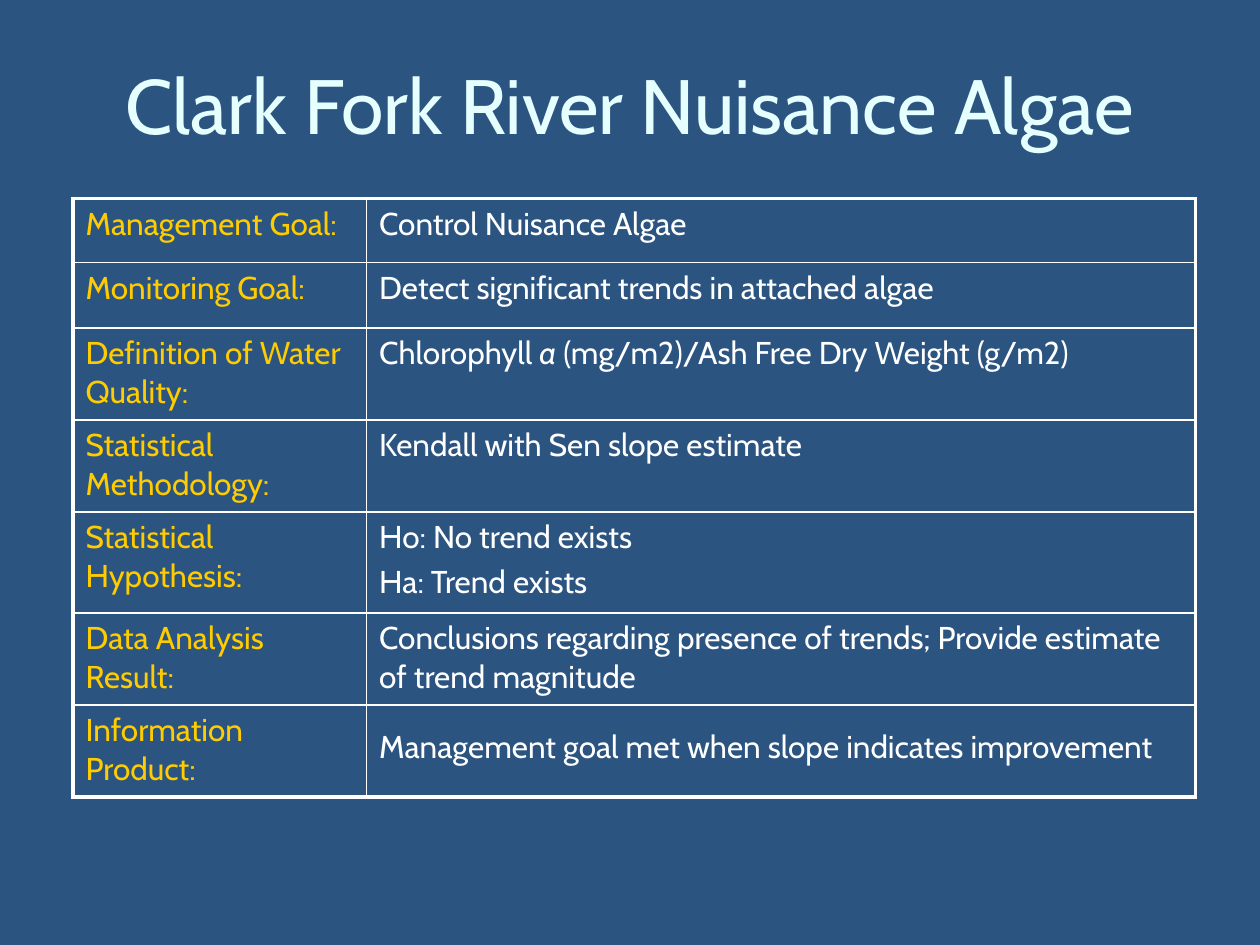
"""Build the Clark Fork River nuisance algae monitoring slide."""
from typing import NamedTuple

import pptx
import pptx.dml.color
import pptx.enum.text
import pptx.oxml
import pptx.oxml.ns
import pptx.util

FONT = "Cabin"
BACKGROUND, TITLE, LABEL, WHITE = "2B5481", "E5FFFF", "FFCC00", "FFFFFF"
SLIDE_WIDTH, SLIDE_HEIGHT = pptx.util.Inches(10), pptx.util.Inches(7.5)
COLUMN_SHARES = (0.233, 0.658)
OUTER_LINE, INNER_LINE = 2.25, 1


class Span(NamedTuple):
    text: str
    italic: bool = False
    size: float | None = None


class Entry(NamedTuple):
    label: str
    details: list[list[Span]]
    height: float


ENTRIES = [
    Entry("Management Goal:", [[Span("Control Nuisance Algae")]], 0.51),
    Entry("Monitoring Goal:",
          [[Span("Detect significant trends in attached algae")]], 0.52),
    Entry("Definition of Water Quality:",
          [[Span("Chlorophyll "), Span("a", italic=True),
            Span(" (mg/m2)/Ash Free Dry Weight (g/m2)")]], 0.73),
    Entry("Statistical Methodology:",
          [[Span("Kendall with Sen slope estimate")]], 0.73),
    Entry("Statistical Hypothesis:",
          [[Span("Ho: No trend exists")], [Span("Ha: Trend exists")]], 0.8),
    Entry("Data Analysis Result:",
          [[Span("Conclusions regarding presence of trends; "
                 "Provide estimate of trend magnitude")]], 0.73),
    Entry("Information Product:",
          [[Span("Management goal met when slope indicates improvement"),
            Span(" ", size=28)]], 0.73),
]


def rgb(color: str) -> pptx.dml.color.RGBColor:
    return pptx.dml.color.RGBColor.from_string(color)


def across(share: float) -> int:
    return round(SLIDE_WIDTH * share)


def down(share: float) -> int:
    return round(SLIDE_HEIGHT * share)


def style_font(font, size: float, color: str) -> None:
    font.name = FONT
    font.size = pptx.util.Pt(size)
    font.color.rgb = rgb(color)


def draw_border(cell, side: str, width: float) -> None:
    line = pptx.oxml.parse_xml(
        f'<a:ln{side} {pptx.oxml.ns.nsdecls("a")} w="{pptx.util.Pt(width)}">'
        f'<a:solidFill><a:srgbClr val="{WHITE}"/></a:solidFill></a:ln{side}>')
    cell._tc.get_or_add_tcPr().append(line)


def fill_cell(cell, paragraphs: list[list[Span]], color: str) -> None:
    frame = cell.text_frame
    for index, spans in enumerate(paragraphs):
        paragraph = frame.add_paragraph() if index else frame.paragraphs[0]
        if index:
            paragraph.space_before = pptx.util.Pt(3.6)
        style_font(paragraph.font, 18, color)
        for span in spans:
            run = paragraph.add_run()
            run.text = span.text
            if span.italic:
                run.font.italic = True
            if span.size:
                run.font.size = pptx.util.Pt(span.size)


def add_title(slide) -> None:
    title = slide.shapes.title
    title.left, title.top = across(0.05), down(0.01)
    title.width, title.height = across(0.9), down(0.2)
    title.text_frame.text = "Clark Fork River Nuisance Algae"
    title.text_frame.vertical_anchor = pptx.enum.text.MSO_ANCHOR.MIDDLE
    heading = title.text_frame.paragraphs[0]
    heading.alignment = pptx.enum.text.PP_ALIGN.CENTER
    style_font(heading.font, 44, TITLE)


def add_goals_table(slide) -> None:
    height = pptx.util.Inches(sum(entry.height for entry in ENTRIES))
    table = slide.shapes.add_table(
        len(ENTRIES), len(COLUMN_SHARES), across(0.058), down(0.21),
        across(sum(COLUMN_SHARES)), height).table
    table.first_row = table.horz_banding = False
    for column, share in zip(table.columns, COLUMN_SHARES):
        column.width = across(share)
    last_row, last_column = len(ENTRIES) - 1, len(COLUMN_SHARES) - 1
    for row, entry in enumerate(ENTRIES):
        table.rows[row].height = pptx.util.Inches(entry.height)
        contents = (([[Span(entry.label)]], LABEL), (entry.details, WHITE))
        for column, (paragraphs, color) in enumerate(contents):
            cell = table.cell(row, column)
            fill_cell(cell, paragraphs, color)
            outer_sides = {"L": column == 0, "R": column == last_column,
                           "T": row == 0, "B": row == last_row}
            for side, outer in outer_sides.items():
                draw_border(cell, side, OUTER_LINE if outer else INNER_LINE)
            cell.fill.background()


def main() -> None:
    deck = pptx.Presentation()
    deck.slide_width, deck.slide_height = SLIDE_WIDTH, SLIDE_HEIGHT
    slide = deck.slides.add_slide(deck.slide_layouts.get_by_name("Title Only"))
    slide.background.fill.solid()
    slide.background.fill.fore_color.rgb = rgb(BACKGROUND)
    add_title(slide)
    add_goals_table(slide)
    deck.save("out.pptx")


if __name__ == "__main__":
    main()
